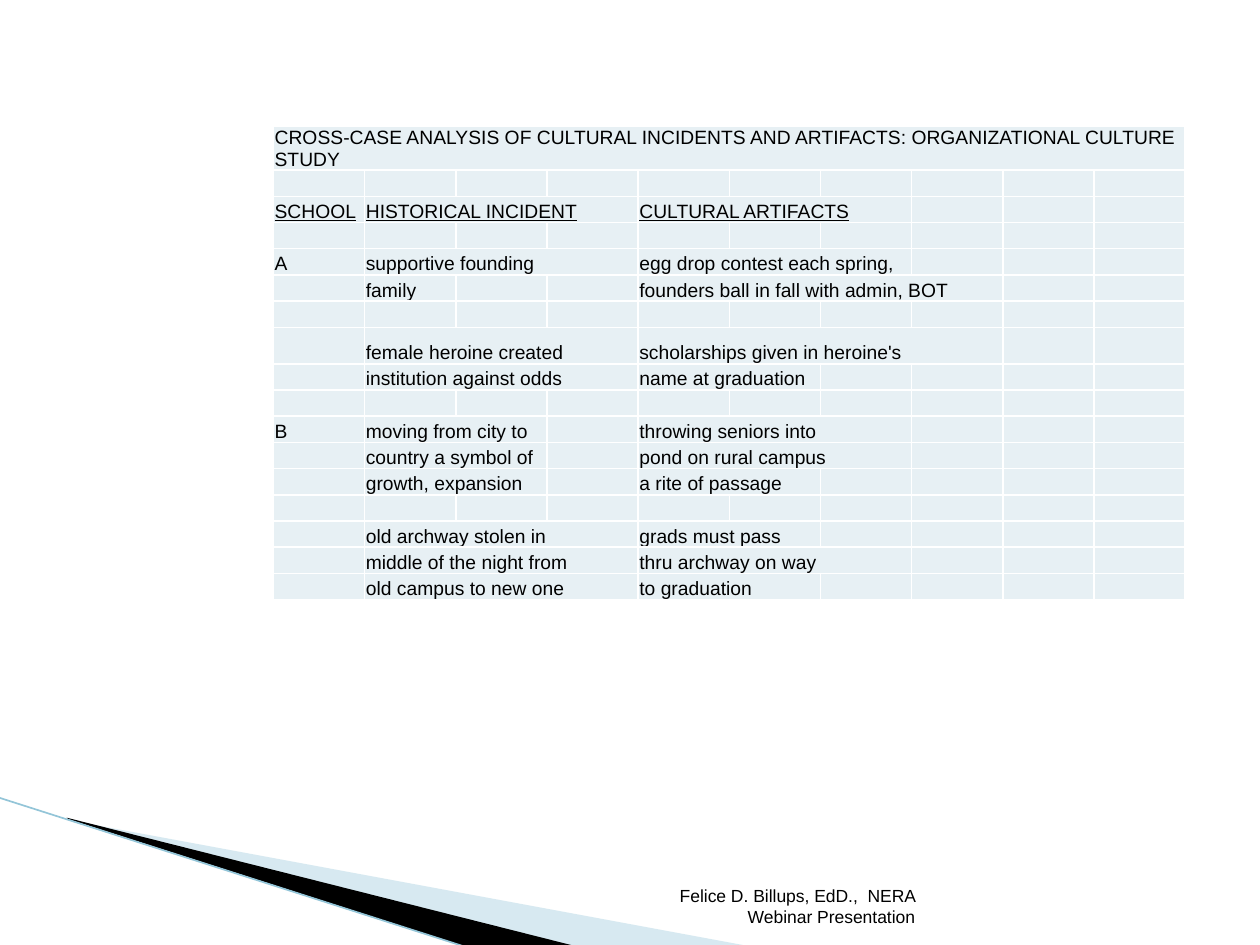
import pptx
import pptx.util
import pptx.dml.color
import pptx.enum.shapes
import pptx.enum.text
import pptx.oxml.ns
import lxml.etree

Inches = pptx.util.Inches
Pt = pptx.util.Pt
qn = pptx.oxml.ns.qn

COLORS = {"cell": "E7F0F4", "border": "FFFFFF", "text": "000000",
          "pale": "9CCADC", "black": "000000", "line": "93C5D8"}
FONT = "Arial"
COLUMN_COUNT, TABLE_WIDTH = 10, 7.24
ROW_HEIGHT, TALL_ROW, TALL_ROW_HEIGHT = 0.208, 7, 0.29
TABLE_LEFT, TABLE_TOP = 2.17, 1
TEXT_SIZE, FOOTER_SIZE = 11, 10
HEADING_ROW = 2

ROWS = [
    [(0, 10, "CROSS-CASE ANALYSIS OF CULTURAL INCIDENTS AND ARTIFACTS: ORGANIZATIONAL CULTURE STUDY")],
    [],
    [(0, 1, "SCHOOL"), (1, 3, "HISTORICAL INCIDENT"), (4, 3, "CULTURAL ARTIFACTS")],
    [],
    [(0, 1, "A"), (1, 3, "supportive founding"), (4, 3, "egg drop contest each spring,")],
    [(1, 1, "family"), (4, 4, "founders ball in fall with admin, BOT")],
    [],
    [(1, 3, "female heroine created"), (4, 4, "scholarships given in heroine's")],
    [(1, 3, "institution against odds"), (4, 2, "name at graduation")],
    [],
    [(0, 1, "B"), (1, 2, "moving from city to"), (4, 3, "throwing seniors into")],
    [(1, 2, "country a symbol of"), (4, 3, "pond on rural campus")],
    [(1, 2, "growth, expansion"), (4, 2, "a rite of passage")],
    [],
    [(1, 3, "old archway stolen in"), (4, 2, "grads must pass")],
    [(1, 3, "middle of the night from"), (4, 3, "thru archway on way")],
    [(1, 3, "old campus to new one"), (4, 2, "to graduation")],
]
FOOTER = "Felice D. Billups, EdD.,  NERA Webinar Presentation"

WEDGES = [
    ("pale", 40, [(0.55, 6.51), (5.95, 7.51), (4.56, 7.51), (0.55, 6.5)]),
    ("black", 100, [(0.53, 6.49), (4.57, 7.51), (3.72, 7.52), (0.54, 6.5)]),
]


def rgb(name):
    return pptx.dml.color.RGBColor.from_string(COLORS[name])


def add_text(paragraph, text, size, underline=False):
    run = paragraph.add_run()
    run.text = text
    run.font.name = FONT
    run.font.size = Pt(size)
    run.font.color.rgb = rgb("text")
    if underline:
        run.font.underline = True


def add_wedge(slide, color, opacity, points):
    corners = [(Inches(x), Inches(y)) for x, y in points]
    builder = slide.shapes.build_freeform(*corners[0])
    builder.add_line_segments(corners[1:], close=True)
    shape = builder.convert_to_shape()
    shape.shadow.inherit = False
    shape.fill.solid()
    shape.fill.fore_color.rgb = rgb(color)
    shape.line.fill.background()
    if opacity < 100:
        fill_color = shape._element.spPr.find(qn("a:solidFill"))[0]
        lxml.etree.SubElement(fill_color, qn("a:alpha"), val=str(opacity * 1000))


def add_edge_line(slide):
    line = slide.shapes.add_connector(
        pptx.enum.shapes.MSO_CONNECTOR.STRAIGHT,
        Inches(-0.01), Inches(6.33), Inches(3.71), Inches(7.52))
    line.line.color.rgb = rgb("line")
    line.line.width = Pt(0.95)
    lxml.etree.SubElement(line._element.spPr, qn("a:effectLst"))


def style_cell(cell):
    cell.margin_left = cell.margin_right = cell.margin_top = Inches(0.01)
    cell.margin_bottom = 0
    cell.vertical_anchor = pptx.enum.text.MSO_ANCHOR.BOTTOM
    properties = cell._tc.get_or_add_tcPr()
    for side in ("lnL", "lnR", "lnT", "lnB"):
        border = lxml.etree.SubElement(properties, qn("a:" + side), w=str(Pt(1)))
        fill = lxml.etree.SubElement(border, qn("a:solidFill"))
        lxml.etree.SubElement(fill, qn("a:srgbClr"), val=COLORS["border"])
    cell.fill.solid()
    cell.fill.fore_color.rgb = rgb("cell")
    paragraph = cell.text_frame.paragraphs[0]
    lxml.etree.SubElement(paragraph._p, qn("a:endParaRPr"), sz=str(TEXT_SIZE * 100))


def add_incident_table(slide):
    table = slide.shapes.add_table(
        len(ROWS), COLUMN_COUNT, Inches(TABLE_LEFT), Inches(TABLE_TOP),
        Inches(TABLE_WIDTH), Inches(ROW_HEIGHT * len(ROWS))).table
    table.first_row = table.horz_banding = False
    for row_index, entries in enumerate(ROWS):
        height = TALL_ROW_HEIGHT if row_index == TALL_ROW else ROW_HEIGHT
        table.rows[row_index].height = Inches(height)
        for cell in table.rows[row_index].cells:
            style_cell(cell)
        for first, span, text in entries:
            cell = table.cell(row_index, first)
            if span > 1:
                cell.merge(table.cell(row_index, first + span - 1))
            add_text(cell.text_frame.paragraphs[0], text, TEXT_SIZE,
                     row_index == HEADING_ROW)


def add_footer(slide):
    box = slide.shapes.add_textbox(Inches(4.79), Inches(7.01), Inches(2.57), Inches(0.4))
    frame = box.text_frame
    frame.word_wrap = True
    frame.vertical_anchor = pptx.enum.text.MSO_ANCHOR.BOTTOM
    paragraph = frame.paragraphs[0]
    paragraph.alignment = pptx.enum.text.PP_ALIGN.RIGHT
    add_text(paragraph, FOOTER, FOOTER_SIZE)


def main():
    presentation = pptx.Presentation()
    presentation.slide_width = Inches(10)
    presentation.slide_height = Inches(7.5)
    slide = presentation.slides.add_slide(presentation.slide_layouts[6])
    for wedge in WEDGES:
        add_wedge(slide, *wedge)
    add_edge_line(slide)
    add_incident_table(slide)
    add_footer(slide)
    presentation.save("out.pptx")


if __name__ == "__main__":
    main()
